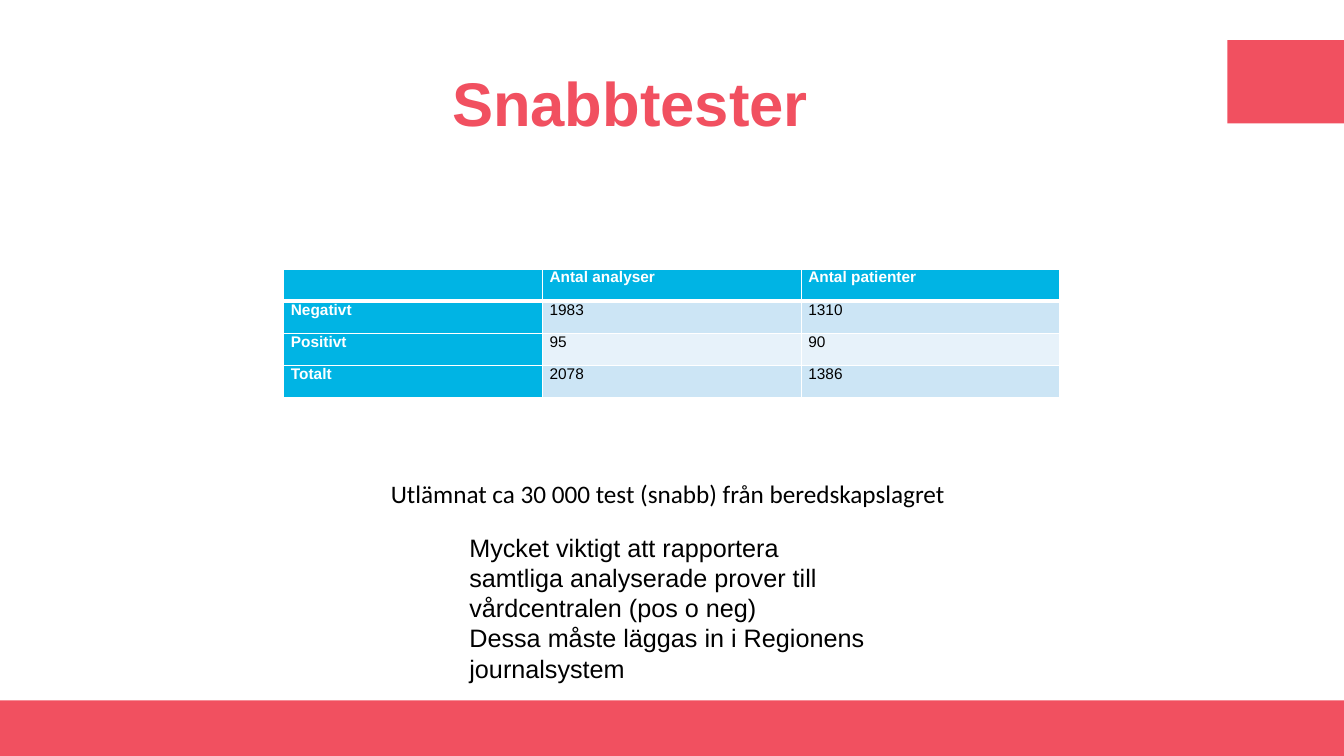
from lxml.etree import SubElement
from pptx import Presentation
from pptx.dml.color import RGBColor
from pptx.enum.shapes import MSO_SHAPE
from pptx.enum.text import MSO_ANCHOR, MSO_AUTO_SIZE, PP_ALIGN
from pptx.oxml.ns import qn
from pptx.util import Cm, Pt

COLORS = {
    "accent": "F15060",
    "header": "00B4E4",
    "band_dark": "CCE5F5",
    "band_light": "E7F2FA",
    "white": "FFFFFF",
    "text": "000000",
}
SLIDE_WIDTH, SLIDE_HEIGHT = 33.87, 19.05
TEST_RESULTS = [
    ["", "Antal analyser", "Antal patienter"],
    ["Negativt", "1983", "1310"],
    ["Positivt", "95", "90"],
    ["Totalt", "2078", "1386"],
]


def color(name):
    """Return the named colour of the palette."""
    return RGBColor.from_string(COLORS[name])


def format_runs(paragraph, size, color_name, font_name="Arial", bold=False):
    """Give every run of a paragraph the same font."""
    for run in paragraph.runs:
        run.font.name = font_name
        run.font.size = Pt(size)
        run.font.bold = bold
        run.font.color.rgb = color(color_name)


def add_accent_block(slide, left, top, width, height):
    """Place a plain rectangle in the accent colour."""
    block = slide.shapes.add_shape(
        MSO_SHAPE.RECTANGLE, Cm(left), Cm(top), Cm(width), Cm(height))
    block.shadow.inherit = False
    block.fill.solid()
    block.fill.fore_color.rgb = color("accent")
    block.line.fill.background()


def fill_title(slide, left, top, width, height):
    """Move the title placeholder into its box and fill it."""
    title = slide.shapes.title
    title.left, title.top = Cm(left), Cm(top)
    title.width, title.height = Cm(width), Cm(height)
    text_frame = title.text_frame
    text_frame.text = "Snabbtester"
    text_frame.vertical_anchor = MSO_ANCHOR.MIDDLE
    paragraph = text_frame.paragraphs[0]
    paragraph.alignment = PP_ALIGN.CENTER
    paragraph.line_spacing = 0.9
    format_runs(paragraph, 44, "accent", bold=True)


def set_borders(cell, bottom_width):
    """Draw white borders round a cell."""
    properties = cell._tc.get_or_add_tcPr()
    widths = {"a:lnL": 1, "a:lnR": 1, "a:lnT": 1, "a:lnB": bottom_width}
    for tag, width in widths.items():
        border = SubElement(properties, qn(tag), w=str(Pt(width)))
        fill = SubElement(border, qn("a:solidFill"))
        SubElement(fill, qn("a:srgbClr"), val=COLORS["white"])


def add_results_table(slide, left, top, width, height):
    """Place the test results with a header row, a header column and bands."""
    table = slide.shapes.add_table(
        len(TEST_RESULTS), len(TEST_RESULTS[0]),
        Cm(left), Cm(top), Cm(width), Cm(height)).table
    for row_index, values in enumerate(TEST_RESULTS):
        band = "band_dark" if row_index % 2 else "band_light"
        for column_index, value in enumerate(values):
            is_header = row_index == 0 or column_index == 0
            cell = table.cell(row_index, column_index)
            cell.margin_left = cell.margin_right = Cm(0.18)
            cell.margin_top = cell.margin_bottom = 0
            set_borders(cell, 3 if row_index == 0 else 1)
            cell.fill.solid()
            cell.fill.fore_color.rgb = color("header" if is_header else band)
            cell.text_frame.text = value
            format_runs(cell.text_frame.paragraphs[0], 11,
                        "white" if is_header else "text", bold=is_header)


def add_note(slide, left, top, width, height, lines, font_name, wrap):
    """Place a text box with one paragraph per line."""
    note = slide.shapes.add_textbox(Cm(left), Cm(top), Cm(width), Cm(height))
    text_frame = note.text_frame
    text_frame.word_wrap = wrap
    text_frame.auto_size = MSO_AUTO_SIZE.SHAPE_TO_FIT_TEXT
    text_frame.text = "\n".join(lines)
    for paragraph in text_frame.paragraphs:
        format_runs(paragraph, 18, "text", font_name)


def main():
    """Build the slide and save it."""
    presentation = Presentation()
    presentation.slide_width = Cm(SLIDE_WIDTH)
    presentation.slide_height = Cm(SLIDE_HEIGHT)
    slide = presentation.slides.add_slide(presentation.slide_layouts[5])
    add_accent_block(slide, 0, 17.65, SLIDE_WIDTH, 1.4)
    add_accent_block(slide, 30.93, 1.01, 2.94, 2.1)
    fill_title(slide, 1.14, 1.02, 29.49, 3.35)
    add_results_table(slide, 7.15, 6.78, 19.56, 3.24)
    add_note(slide, 9.6, 11.94, 14.66, 1.02,
             ["Utlämnat ca 30 000 test (snabb) från beredskapslagret"],
             "Calibri", False)
    add_note(slide, 11.58, 13.28, 10.69, 4.11,
             ["Mycket viktigt att rapportera samtliga analyserade prover "
              "till vårdcentralen (pos o neg)",
              "Dessa måste läggas in i Regionens journalsystem"],
             "Arial", True)
    presentation.save("out.pptx")


if __name__ == "__main__":
    main()
